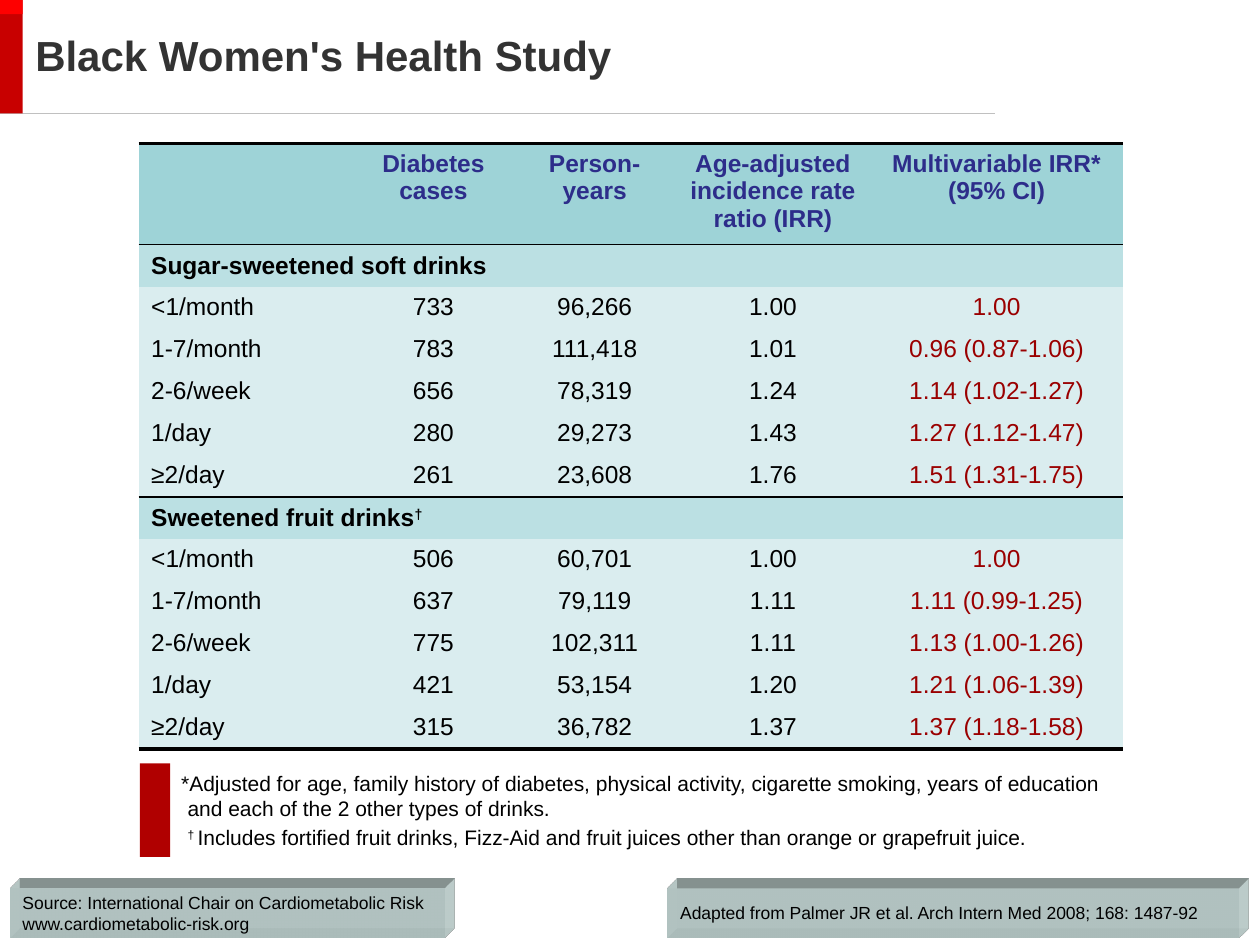
from typing import NamedTuple

from lxml import etree
from pptx import Presentation
from pptx.dml.color import RGBColor
from pptx.enum.shapes import MSO_CONNECTOR, MSO_SHAPE
from pptx.enum.text import MSO_ANCHOR, PP_ALIGN
from pptx.oxml import parse_xml
from pptx.oxml.ns import nsdecls, qn
from pptx.util import Inches, Pt

WIDE, HIGH = Inches(10), Inches(7.5)
BLACK = RGBColor(0, 0, 0)
WHITE = RGBColor(0xFF, 0xFF, 0xFF)
GRAY = RGBColor(0xC0, 0xC0, 0xC0)
INK = RGBColor(0x33, 0x33, 0x33)
NAVY = RGBColor(0x2D, 0x2D, 0x8A)
MAROON = RGBColor(0x9A, 0, 0)
RED = RGBColor(0xC8, 0, 0)
BRIGHT = RGBColor(0xFE, 0, 0)
BRICK = RGBColor(0xB0, 0, 0)
MIST = RGBColor(0xD8, 0xEC, 0xEA)
TEAL = RGBColor(0x9E, 0xD3, 0xD7)
AQUA = RGBColor(0xBB, 0xE0, 0xE3)
PALE = RGBColor(0xDA, 0xED, 0xEF)
PLAIN = "{2D5ABB26-0587-4C30-8999-92F81FD0307C}"


class Box(NamedTuple):
    """A place given as shares of the slide's width and height."""
    left: float
    top: float
    width: float
    height: float

    def emu(self) -> tuple:
        return (int(self.left * WIDE), int(self.top * HIGH),
                int(self.width * WIDE), int(self.height * HIGH))


class Style(NamedTuple):
    size: float
    color: RGBColor = BLACK
    bold: bool = False


class Part(NamedTuple):
    """One drink type: its heading, a mark raised after it, and its rows."""
    name: str
    mark: str
    rows: list


HEADS = ["", "Diabetes cases", "Person-years",
         "Age-adjusted incidence rate ratio (IRR)",
         "Multivariable IRR*\n(95% CI)"]
RATES = ["<1/month", "1-7/month", "2-6/week", "1/day", "≥2/day"]
PARTS = [
    Part("Sugar-sweetened soft drinks", "", [
        ("733", "96,266", "1.00", "1.00"),
        ("783", "111,418", "1.01", "0.96 (0.87-1.06)"),
        ("656", "78,319", "1.24", "1.14 (1.02-1.27)"),
        ("280", "29,273", "1.43", "1.27 (1.12-1.47)"),
        ("261", "23,608", "1.76", "1.51 (1.31-1.75)")]),
    Part("Sweetened fruit drinks", "†", [
        ("506", "60,701", "1.00", "1.00"),
        ("637", "79,119", "1.11", "1.11 (0.99-1.25)"),
        ("775", "102,311", "1.11", "1.13 (1.00-1.26)"),
        ("421", "53,154", "1.20", "1.21 (1.06-1.39)"),
        ("315", "36,782", "1.37", "1.37 (1.18-1.58)")]),
]
COLS = [1.7, 1.28, 1.28, 1.55, 2]
HEAD_ROW, ROW = 0.8, 1 / 3
SOURCES = [
    (Box(0.008, 0.94, 0.345, 0.052),
     ["Source: International Chair on Cardiometabolic Risk",
      "www.cardiometabolic-risk.org"]),
    (Box(0.53, 0.94, 0.453, 0.052),
     ["Adapted from Palmer JR et al. Arch Intern Med 2008; 168: 1487-92"]),
]


def add_run(para, text: str, style: Style, base: int = 0) -> None:
    run = para.add_run()
    run.text = text
    font = run.font
    font.name, font.size, font.bold = "Arial", Pt(style.size), style.bold
    font.color.rgb = style.color
    if base:
        run._r.get_or_add_rPr().set("baseline", str(base * 1000))


def add_lines(frame, lines: list, style: Style, align=PP_ALIGN.LEFT) -> None:
    for i, line in enumerate(lines):
        para = frame.add_paragraph() if i else frame.paragraphs[0]
        para.alignment = align
        add_run(para, line, style)


def add_rect(shapes, box: Box, fill: RGBColor):
    rect = shapes.add_shape(MSO_SHAPE.RECTANGLE, *box.emu())
    rect.shadow.inherit = False
    rect.fill.solid()
    rect.fill.fore_color.rgb = fill
    rect.line.fill.background()
    rect.text_frame.word_wrap = True
    rect.text_frame.vertical_anchor = MSO_ANCHOR.MIDDLE
    return rect


def add_slab(shapes, box: Box, lines: list) -> None:
    """Draw a see-through block, extruded up and to the right."""
    slab = add_rect(shapes, box, MIST)
    tint = slab.fill._xPr.find(qn("a:solidFill"))[0]
    etree.SubElement(tint, qn("a:alpha"), val="89000")
    props = slab._element.spPr
    props.append(parse_xml(
        f'<a:scene3d {nsdecls("a")}><a:camera prst="legacyObliqueTopRight"/>'
        '<a:lightRig rig="legacyFlat3" dir="t"/></a:scene3d>'))
    props.append(parse_xml(
        f'<a:sp3d {nsdecls("a")} extrusionH="201600" '
        'prstMaterial="legacyMatte"><a:extrusionClr>'
        f'<a:srgbClr val="{MIST}"/></a:extrusionClr></a:sp3d>'))
    add_lines(slab.text_frame, lines, Style(10))


def add_edge(cells, side: str, width: float) -> None:
    for cell in cells:
        cell._tc.get_or_add_tcPr().insert(0, parse_xml(
            f'<a:{side} {nsdecls("a")} w="{Pt(width)}"><a:solidFill>'
            f'<a:srgbClr val="{BLACK}"/></a:solidFill></a:{side}>'))


def fill_row(cells: list, texts: list, fill: RGBColor, styles: list) -> None:
    for i, (cell, text, style) in enumerate(zip(cells, texts, styles)):
        cell.fill.solid()
        cell.fill.fore_color.rgb = fill
        align = PP_ALIGN.CENTER if i else PP_ALIGN.LEFT
        if text:
            add_lines(cell.text_frame, text.split("\n"), style, align)
        else:
            para = cell.text_frame.paragraphs[0]
            para.font.size = Pt(style.size)
            end = etree.SubElement(para._p, qn("a:endParaRPr"))
            end.set("sz", str(style.size * 100))


def add_grid(shapes) -> None:
    count = 1 + len(PARTS) * (1 + len(RATES))
    frame = shapes.add_table(count, len(COLS), Inches(1.1), Inches(1.14),
                             Inches(sum(COLS)),
                             Inches(HEAD_ROW + ROW * (count - 1)))
    grid = frame.table
    grid.first_row = grid.horz_banding = False
    grid._tbl.tblPr.find(qn("a:tableStyleId")).text = PLAIN
    for col, width in zip(grid.columns, COLS):
        col.width = Inches(width)
    for i, row in enumerate(grid.rows):
        row.height = Inches(ROW if i else HEAD_ROW)

    rows = [list(row.cells) for row in grid.rows]
    fill_row(rows[0], HEADS, TEAL, [Style(14, NAVY, True)] * len(COLS))
    add_edge(rows[0], "lnB", 1)
    add_edge(rows[0], "lnT", 2)
    plain, strong = Style(14), Style(14, bold=True)
    styles = [plain] * (len(COLS) - 1) + [Style(14, MAROON)]
    for i, part in enumerate(PARTS):
        start = 1 + i * (1 + len(RATES))
        band = rows[start]
        fill_row(band, [part.name] + [""] * (len(COLS) - 1), AQUA,
                 [strong] * len(COLS))
        if part.mark:
            add_run(band[0].text_frame.paragraphs[0], part.mark, strong, 30)
        band[0].vertical_anchor = MSO_ANCHOR.MIDDLE
        band[0].merge(band[1])
        body = rows[start + 1:start + 1 + len(RATES)]
        for cells, rate, data in zip(body, RATES, part.rows):
            fill_row(cells, [rate, *data], PALE, styles)
        add_edge(body[-1], "lnB", 2.25 if part is PARTS[-1] else 1)


def add_notes(shapes) -> None:
    group = shapes.add_group_shape().shapes
    frame = add_rect(group, Box(0.134, 0.808, 0.757, 0.099), WHITE).text_frame
    style = Style(12)
    first, second = frame.paragraphs[0], frame.add_paragraph()
    for para, indent in ((first, -0.05), (second, 0)):
        para.alignment = PP_ALIGN.LEFT
        props = para._p.get_or_add_pPr()
        props.set("marL", str(Inches(0.05)))
        props.set("indent", str(Inches(indent)))
    second.space_before = Pt(2.4)
    add_run(first, "*Adjusted for age, family history of diabetes, physical "
            "activity, cigarette smoking, years of education and each of the "
            "2 other types of drinks.", style)
    add_run(second, "† ", style, 30)
    add_run(second, "Includes fortified fruit drinks, Fizz-Aid and fruit "
            "juices other than orange or grapefruit juice.", style)
    add_rect(group, Box(0.111, 0.808, 0.024, 0.099), BRICK)


def main() -> None:
    deck = Presentation()
    deck.slide_width, deck.slide_height = WIDE, HIGH
    slide = deck.slides.add_slide(deck.slide_layouts[5])
    shapes = slide.shapes

    rule = shapes.add_connector(MSO_CONNECTOR.STRAIGHT, 0, int(0.12 * HIGH),
                                int(0.79 * WIDE), int(0.12 * HIGH))
    rule.line.color.rgb, rule.line.width = GRAY, Pt(0.75)
    etree.SubElement(rule._element.spPr, qn("a:effectLst"))
    add_rect(shapes, Box(0, 0, 0.018, 0.12), RED)
    add_rect(shapes, Box(0, 0, 0.018, 0.015), BRIGHT)

    title = shapes.title
    title.left, title.top, title.width, title.height = Box(
        0.018, -0.003, 0.923, 0.121).emu()
    title.text_frame.vertical_anchor = MSO_ANCHOR.MIDDLE
    add_lines(title.text_frame, ["Black Women's Health Study"],
              Style(24, INK, True))

    add_grid(shapes)
    for box, lines in SOURCES:
        add_slab(shapes, box, lines)
    add_notes(shapes)
    deck.save("out.pptx")


if __name__ == "__main__":
    main()
